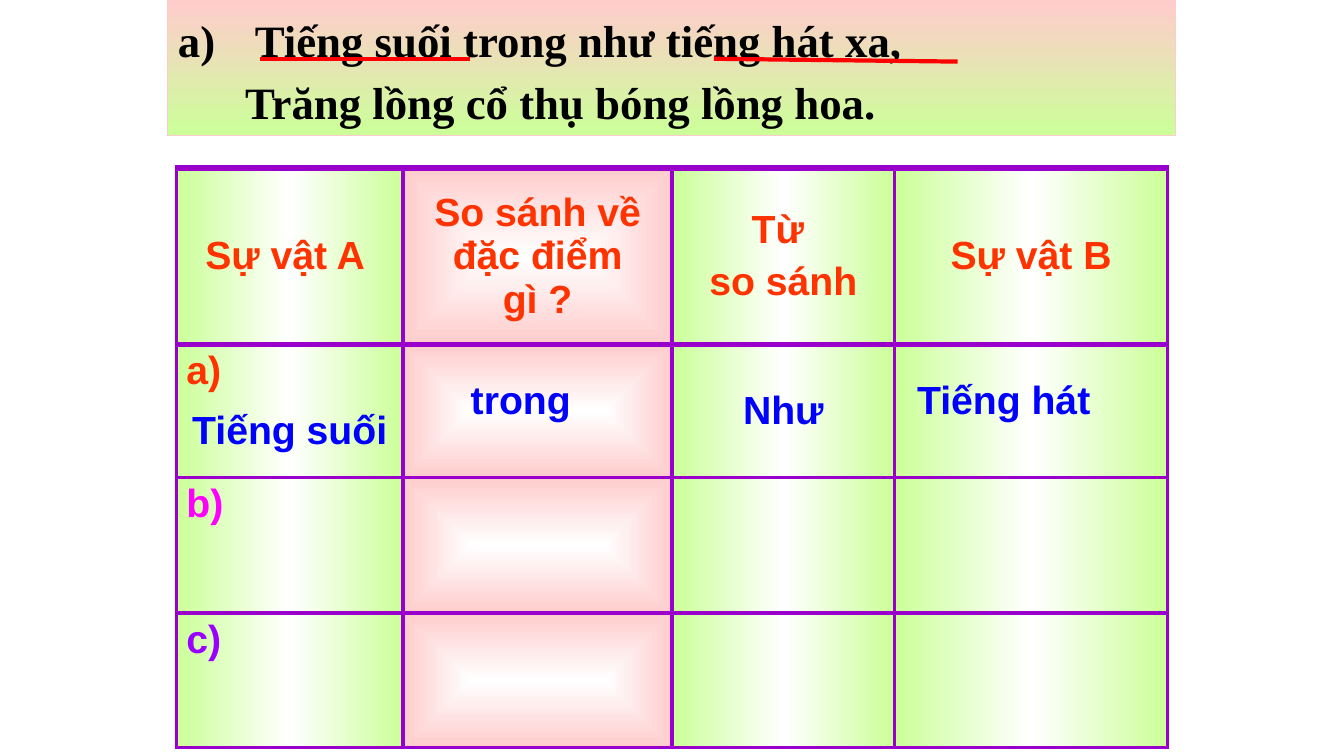
"""Builds a Vietnamese grammar slide: a verse and a table that breaks down its simile."""
from lxml.etree import SubElement
from pptx import Presentation
from pptx.dml.color import RGBColor
from pptx.enum.shapes import MSO_CONNECTOR as CONN, MSO_SHAPE as SHAPE
from pptx.enum.text import MSO_ANCHOR as ANCHOR, MSO_AUTO_SIZE as AUTO, PP_ALIGN as ALIGN
from pptx.oxml.ns import qn
from pptx.util import Pt

BLACK = RGBColor(0x00, 0x00, 0x00)
WHITE = RGBColor(0xFF, 0xFF, 0xFF)
RED = RGBColor(0xFF, 0x00, 0x00)
ORANGE = RGBColor(0xFF, 0x33, 0x00)
BLUE = RGBColor(0x00, 0x00, 0xFF)
MAGENTA = RGBColor(0xFF, 0x00, 0xFF)
VIOLET = RGBColor(0x99, 0x00, 0xFF)
PURPLE = RGBColor(0x99, 0x00, 0xCC)
GREEN = RGBColor(0xCC, 0xFF, 0x99)
PINK = RGBColor(0xFF, 0xCC, 0xCC)

VERSE = [("Tiếng suối trong như tiếng hát xa,", 55, True),
         ("Trăng lồng cổ thụ bóng lồng hoa.", 48, False)]
VERSE_BOX = (120, 0.5, 720, 96)
UNDERLINES = [(186, 42, 336, 42), (510, 42, 684, 44)]

HEADERS = ["Sự vật A ", "So sánh về đặc điểm gì ?", "Từ \nso sánh", "Sự vật B"]
ROW_LABELS = [("a)", ORANGE), ("b)", MAGENTA), ("c)", VIOLET)]
LINK_WORD = "Như"
ANSWERS = [("Tiếng suối", 102, 273), ("trong", 267, 252), ("Tiếng hát", 612, 252)]
ANSWER_SIZE = (210, 66)

TABLE_LEFT, TABLE_TOP = 126, 120
COL_WIDTHS = [162, 192, 159, 195]
ROW_HEIGHTS = [126, 95, 97, 96]
RULE_WIDTHS = [4.5, 4.5, 3, 3, 3]
FEATURE_COL = 1


def style(p, size, color, font="Arial"):
    for r in p.runs:
        r.font.size, r.font.bold, r.font.name = Pt(size), True, font
        r.font.color.rgb = color


def add_border(tc_pr, side, width):
    ln = SubElement(tc_pr, qn(f"a:ln{side}"), w=str(Pt(width)))
    fill = SubElement(ln, qn("a:solidFill"))
    SubElement(fill, qn("a:srgbClr"), val=str(PURPLE))


def add_gradient(tc_pr, colors, radial):
    grad = SubElement(tc_pr, qn("a:gradFill"), rotWithShape="1")
    stops = SubElement(grad, qn("a:gsLst"))
    for i, color in enumerate(colors):
        gs = SubElement(stops, qn("a:gs"), pos=str(100000 * i // (len(colors) - 1)))
        SubElement(gs, qn("a:srgbClr"), val=str(color))
    if radial:
        shade = SubElement(grad, qn("a:path"), path="rect")
        SubElement(shade, qn("a:fillToRect"), l="50000", t="50000", r="50000", b="50000")
    else:
        SubElement(grad, qn("a:lin"), ang="0", scaled="1")


def fill_cell(cell, text, color, centered):
    cell.text_frame.text = text
    if centered:
        cell.vertical_anchor = ANCHOR.MIDDLE
    for p in cell.text_frame.paragraphs:
        p.alignment = ALIGN.CENTER if centered else ALIGN.LEFT
        p.space_before = Pt(6)
        style(p, 28, color)


def add_table(s):
    tbl = s.shapes.add_table(len(ROW_HEIGHTS), len(COL_WIDTHS), Pt(TABLE_LEFT), Pt(TABLE_TOP),
                             Pt(sum(COL_WIDTHS)), Pt(sum(ROW_HEIGHTS))).table
    tbl.first_row = tbl.horz_banding = False
    for col, width in zip(tbl.columns, COL_WIDTHS):
        col.width = Pt(width)
    for row, height in zip(tbl.rows, ROW_HEIGHTS):
        row.height = Pt(height)
    for c, header in enumerate(HEADERS):
        fill_cell(tbl.cell(0, c), header, ORANGE, True)
    for r, (label, color) in enumerate(ROW_LABELS, 1):
        fill_cell(tbl.cell(r, 0), label, color, False)
    fill_cell(tbl.cell(1, 2), LINK_WORD, BLUE, True)
    for r in range(len(ROW_HEIGHTS)):
        for c in range(len(COL_WIDTHS)):
            tc_pr = tbl.cell(r, c)._tc.get_or_add_tcPr()
            for side, width in zip("LRTB", (3, 3, RULE_WIDTHS[r], RULE_WIDTHS[r + 1])):
                add_border(tc_pr, side, width)
            radial = c == FEATURE_COL
            add_gradient(tc_pr, [WHITE, PINK] if radial else [GREEN, WHITE, GREEN], radial)


def add_verse(s):
    sp = s.shapes.add_shape(SHAPE.RECTANGLE, *map(Pt, VERSE_BOX))
    sp.shadow.inherit = False
    sp.fill.gradient()
    sp.fill.gradient_angle = 270
    for stop, color in zip(sp.fill.gradient_stops, (PINK, GREEN)):
        stop.color.rgb = color
    sp.line.color.rgb, sp.line.width = PINK, Pt(0.75)
    tf = sp.text_frame
    tf.word_wrap, tf.auto_size, tf.vertical_anchor = True, AUTO.SHAPE_TO_FIT_TEXT, ANCHOR.TOP
    tf.text = "\n".join(text for text, _, _ in VERSE)
    for p, (_, margin, numbered) in zip(tf.paragraphs, VERSE):
        p.alignment, p.line_spacing = ALIGN.LEFT, 1.14
        style(p, 32, BLACK, "Times New Roman")
        p_pr = p._p.get_or_add_pPr()
        p_pr.set("marL", str(Pt(margin)))
        p_pr.set("indent", str(-Pt(margin) if numbered else 0))
        if numbered:
            SubElement(p_pr, qn("a:buFont"), typeface="Arial")
            SubElement(p_pr, qn("a:buAutoNum"), type="alphaLcParenR")


def add_underline(s, ends):
    line = s.shapes.add_connector(CONN.STRAIGHT, *map(Pt, ends))
    line.line.color.rgb, line.line.width = RED, Pt(3)
    SubElement(line._element.spPr, qn("a:effectLst"))


def add_answer(s, text, left, top):
    tf = s.shapes.add_textbox(Pt(left), Pt(top), *map(Pt, ANSWER_SIZE)).text_frame
    tf.word_wrap, tf.vertical_anchor = False, ANCHOR.MIDDLE
    tf.text = text
    p = tf.paragraphs[0]
    p.alignment = ALIGN.CENTER
    style(p, 28, BLUE)


def main():
    prs = Presentation()
    prs.slide_width, prs.slide_height = Pt(960), Pt(540)
    s = prs.slides.add_slide(prs.slide_layouts[6])
    add_table(s)
    add_verse(s)
    for ends in UNDERLINES:
        add_underline(s, ends)
    for answer in ANSWERS:
        add_answer(s, *answer)
    prs.save("out.pptx")


if __name__ == "__main__":
    main()
